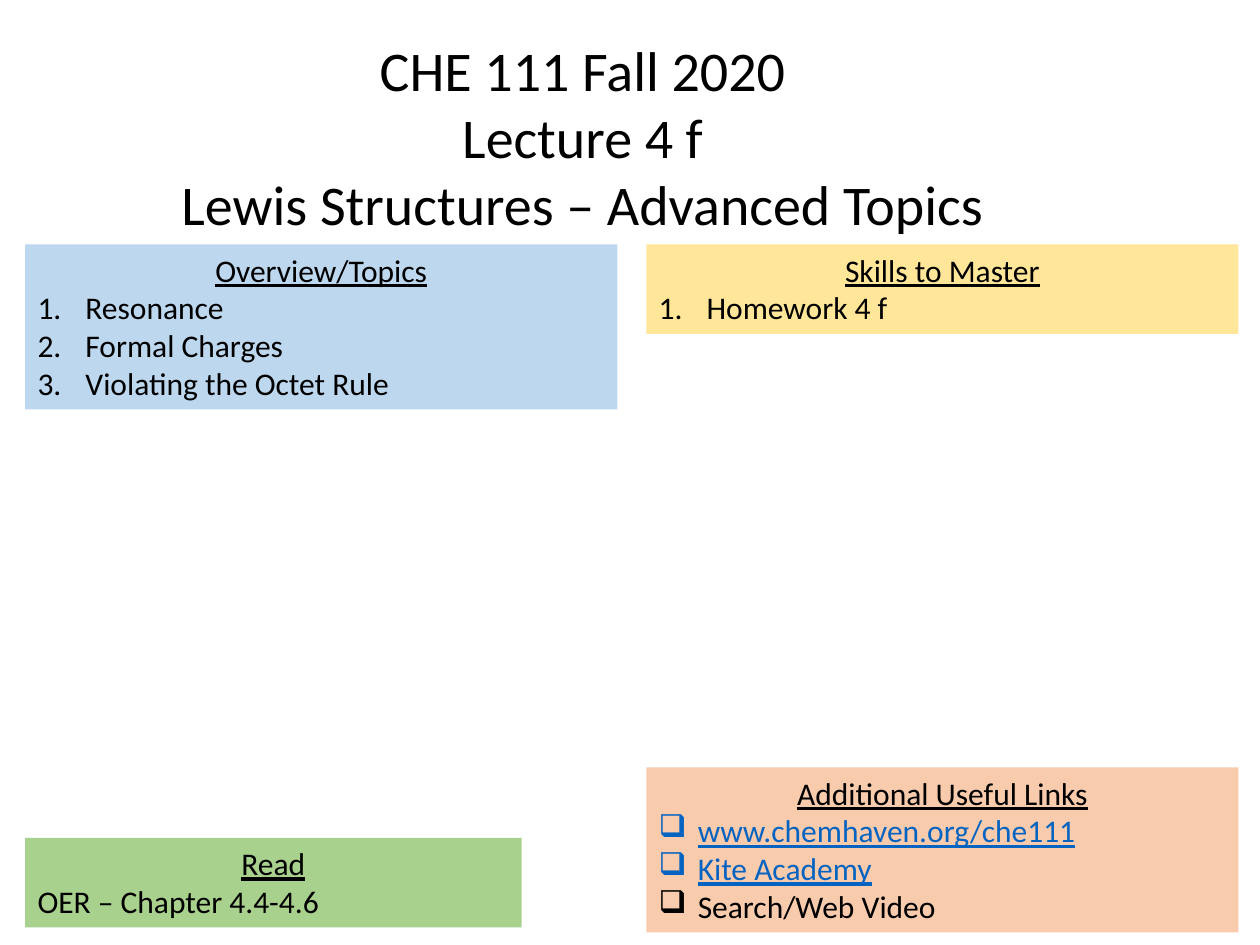
import dataclasses

import lxml.etree
import pptx
import pptx.dml.color
import pptx.enum.shapes
import pptx.enum.text
import pptx.oxml.ns
import pptx.util

Inches = pptx.util.Inches
ALIGN = pptx.enum.text.PP_ALIGN
ANCHOR = pptx.enum.text.MSO_ANCHOR
AUTO_SIZE = pptx.enum.text.MSO_AUTO_SIZE


@dataclasses.dataclass(frozen=True)
class Theme:
    font: str = "Calibri"
    title_size: int = 32
    body_size: int = 18
    text: str = "000000"
    link: str = "0563C1"
    overview: str = "BDD7EE"
    skills: str = "FFE699"
    reading: str = "A9D18E"
    resources: str = "F8CBAD"


class SlideBuilder:
    """Adds the title and the coloured panels to one slide in a shared style."""

    def __init__(self, slide, theme):
        self.slide = slide
        self.theme = theme

    def apply(self, target, values):
        for name, value in values.items():
            setattr(target, name, value)

    def place(self, shape, left, top, width, height):
        names = ("left", "top", "width", "height")
        lengths = map(Inches, (left, top, width, height))
        self.apply(shape, dict(zip(names, lengths)))

    def add_text(self, paragraph, text, size, color, underline=False):
        run = paragraph.add_run()
        run.text = text
        self.apply(run.font, {
            "name": self.theme.font,
            "size": pptx.util.Pt(size),
            "underline": underline,
        })
        run.font.color.rgb = pptx.dml.color.RGBColor.from_string(color)

    def bullet(self, paragraph, tag, indent, **attributes):
        properties = paragraph._p.get_or_add_pPr()
        properties.set("marL", str(Inches(indent)))
        properties.set("indent", str(-Inches(indent)))
        lxml.etree.SubElement(properties, pptx.oxml.ns.qn(tag), attributes)

    def title(self, lines, *box):
        shape = self.slide.shapes.title
        self.place(shape, *box)
        frame = shape.text_frame
        self.apply(frame, {
            "word_wrap": False,
            "auto_size": AUTO_SIZE.SHAPE_TO_FIT_TEXT,
            "vertical_anchor": ANCHOR.TOP,
        })
        for index, line in enumerate(lines):
            paragraph = frame.add_paragraph() if index else frame.paragraphs[0]
            paragraph.alignment = ALIGN.CENTER
            self.add_text(paragraph, line, self.theme.title_size, self.theme.text)

    def panel(self, heading, items, fill, box, marker=None, links=0):
        shape = self.slide.shapes.add_shape(
            pptx.enum.shapes.MSO_SHAPE.RECTANGLE, *map(Inches, box))
        shape.shadow.inherit = False
        shape.fill.solid()
        shape.fill.fore_color.rgb = pptx.dml.color.RGBColor.from_string(fill)
        shape.line.fill.background()
        frame = shape.text_frame
        self.apply(frame, {
            "word_wrap": True,
            "auto_size": AUTO_SIZE.SHAPE_TO_FIT_TEXT,
            "vertical_anchor": ANCHOR.TOP,
        })
        size = self.theme.body_size
        frame.paragraphs[0].alignment = ALIGN.CENTER
        self.add_text(frame.paragraphs[0], heading, size, self.theme.text, True)
        for index, item in enumerate(items):
            paragraph = frame.add_paragraph()
            paragraph.alignment = ALIGN.LEFT
            if marker == "number":
                self.bullet(paragraph, "a:buAutoNum", 0.38, type="arabicPeriod")
            elif marker:
                self.bullet(paragraph, "a:buChar", 0.31, char=marker)
            is_link = index < links
            color = self.theme.link if is_link else self.theme.text
            self.add_text(paragraph, item, size, color, is_link)


def main():
    presentation = pptx.Presentation()
    presentation.slide_width = Inches(10)
    presentation.slide_height = Inches(7.5)
    slide = presentation.slides.add_slide(presentation.slide_layouts[5])
    theme = Theme()
    builder = SlideBuilder(slide, theme)
    left, right, top, width = 0.2, 5.13, 1.94, 4.7
    short, tall = 0.71, 1.31

    builder.title(
        ["CHE 111 Fall 2020", "Lecture 4 f", "Lewis Structures – Advanced Topics"],
        1.31, 0.23, 6.63, 1.72)
    builder.panel(
        "Overview/Topics",
        ["Resonance", "Formal Charges", "Violating the Octet Rule"],
        theme.overview, (left, top, width, tall), "number")
    builder.panel(
        "Skills to Master", ["Homework 4 f"],
        theme.skills, (right, top, width, short), "number")
    builder.panel(
        "Read", ["OER – Chapter 4.4-4.6"],
        theme.reading, (left, 6.65, 3.94, short))
    builder.panel(
        "Additional Useful Links",
        ["www.chemhaven.org/che111", "Kite Academy", "Search/Web Video"],
        theme.resources, (right, 6.09, width, tall), "❑", links=2)
    presentation.save("out.pptx")


if __name__ == "__main__":
    main()
